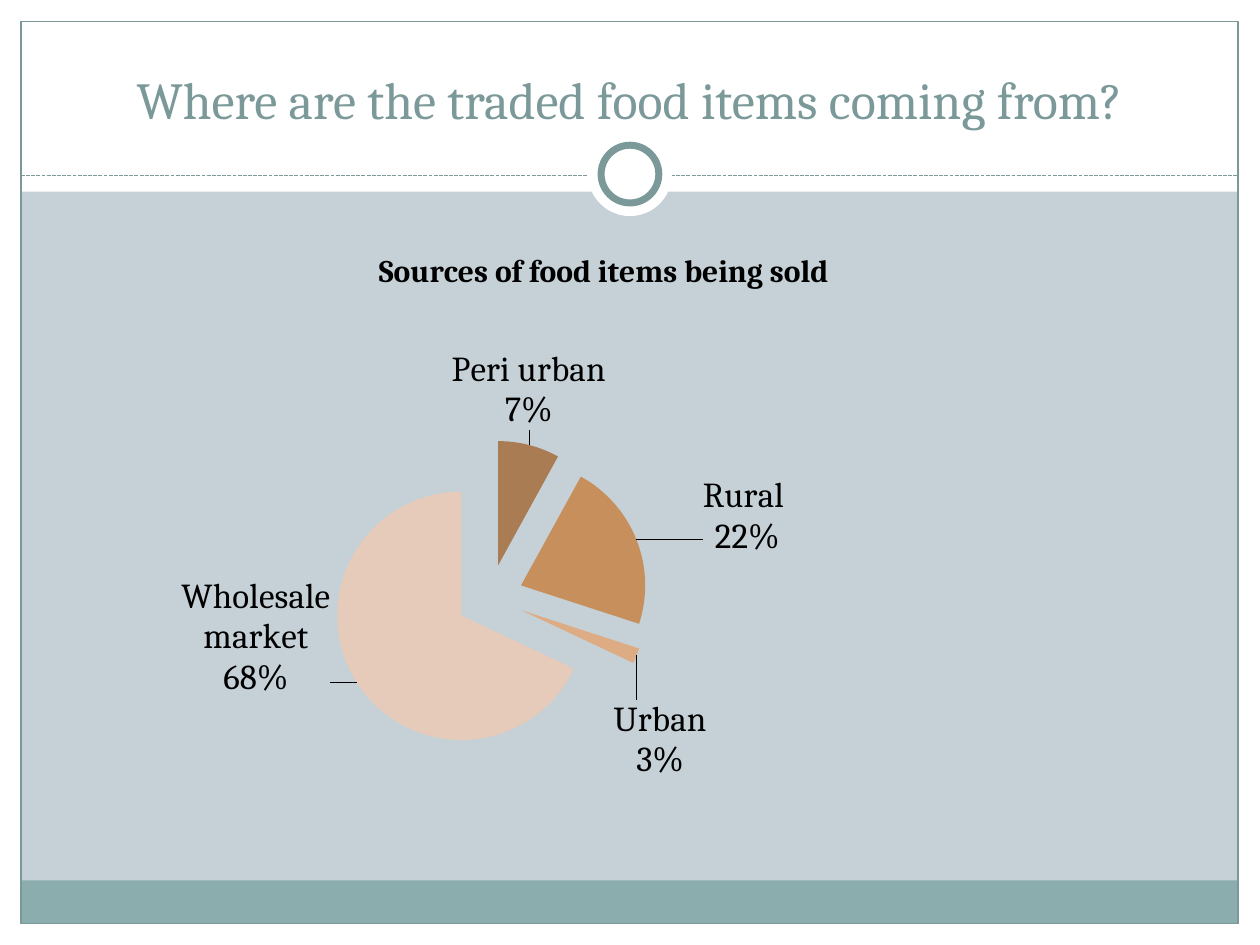
from lxml import etree
from pptx import Presentation
from pptx.chart.data import CategoryChartData
from pptx.dml.color import RGBColor
from pptx.enum.chart import XL_CHART_TYPE, XL_LABEL_POSITION
from pptx.enum.dml import MSO_LINE
from pptx.enum.shapes import MSO_CONNECTOR, MSO_SHAPE
from pptx.enum.text import MSO_ANCHOR, PP_ALIGN
from pptx.oxml import parse_xml
from pptx.oxml.ns import nsdecls, qn
from pptx.util import Pt

RECTANGLE, OVAL = MSO_SHAPE.RECTANGLE, MSO_SHAPE.OVAL
OUTSIDE = XL_LABEL_POSITION.OUTSIDE_END
FONT = "Cambria"
COLORS = {
    "background": "C5D1D7", "white": "FFFFFF", "band": "8CADAE",
    "accent": "7C999A", "black": "000000",
    "peri urban": "AA7C54", "rural": "C68F5B",
    "urban": "DDAB84", "wholesale": "E6CBBA",
}
# category, value, shown percentage, slice colour, label shift in chart fractions
SOURCES = [
    ("Peri urban", 8, "7%", "peri urban", (-0.08, -0.01)),
    ("Rural ", 22, "22%", "rural", (0.06, 0.03)),
    ("Urban", 2, "3%", "urban", (-0.03, 0.06)),
    ("Wholesale market", 68, "68%", "wholesale", (-0.02, -0.16)),
]


def color(name):
    return RGBColor.from_string(COLORS[name])


def manual_layout(x, y, size=None):
    """Return a c:layout: a fixed inner plot area, or a label shift without size."""
    inner = edges = extent = ""
    if size:
        inner = '<c:layoutTarget val="inner"/>'
        edges = '<c:xMode val="edge"/><c:yMode val="edge"/>'
        extent = f'<c:w val="{size[0]}"/><c:h val="{size[1]}"/>'
    return parse_xml(
        f'<c:layout {nsdecls("c")}><c:manualLayout>{inner}{edges}'
        f'<c:x val="{x}"/><c:y val="{y}"/>{extent}</c:manualLayout></c:layout>')


deck = Presentation()
deck.slide_width, deck.slide_height = Pt(720), Pt(540)
page = deck.slides.add_slide(deck.slide_layouts[5])
page.background.fill.solid()
page.background.fill.fore_color.rgb = color("background")

# Frame: kind, left, top, width, height, fill, line, line width
FRAME = [
    (RECTANGLE, 0, 527.8, 720, 12.2, "white", None, 0),
    (RECTANGLE, 0, 0, 720, 109.5, "white", None, 0),
    (RECTANGLE, 0, 0, 12, 540, "white", None, 0),
    (RECTANGLE, 708, 0, 12, 540, "white", None, 0),
    (RECTANGLE, 12, 503, 696, 24.8, "band", None, 0),
    (RECTANGLE, 12, 12.2, 695.5, 515.5, None, "accent", 0.75),
    (OVAL, 336, 75.5, 48, 48, "white", None, 0),
    (OVAL, 343.5, 83, 33, 33, "white", "accent", 4),
]
for kind, left, top, width, height, fill, line, weight in FRAME:
    if kind == OVAL and line is None:
        divider = page.shapes.add_connector(
            MSO_CONNECTOR.STRAIGHT, Pt(12), Pt(100.5), Pt(708), Pt(100.5))
        divider.line.color.rgb = color("accent")
        divider.line.width = Pt(0.75)
        divider.line.dash_style = MSO_LINE.SQUARE_DOT
        etree.SubElement(divider._element.spPr, qn("a:effectLst"))
    shape = page.shapes.add_shape(kind, Pt(left), Pt(top), Pt(width), Pt(height))
    shape.shadow.inherit = False
    if fill:
        shape.fill.solid()
        shape.fill.fore_color.rgb = color(fill)
    else:
        shape.fill.background()
    if line:
        shape.line.color.rgb = color(line)
        shape.line.width = Pt(weight)
    else:
        shape.line.fill.background()

# Title, brought in front of the frame
title = page.shapes.title
page.shapes._spTree.append(title._element)
title.left, title.top, title.width, title.height = Pt(24), Pt(18), Pt(672), Pt(60)
title.text_frame.text = "Where are the traded food items coming from?"
title.text_frame.vertical_anchor = MSO_ANCHOR.BOTTOM
heading = title.text_frame.paragraphs[0]
heading.alignment = PP_ALIGN.CENTER
heading.font.name, heading.font.size = FONT, Pt(29.7)
heading.font.color.rgb = color("accent")

# Pie chart
data = CategoryChartData()
data.categories = [source[0] for source in SOURCES]
data.add_series("Series 1", [source[1] for source in SOURCES])
chart = page.shapes.add_chart(
    XL_CHART_TYPE.PIE, Pt(62), Pt(128), Pt(566), Pt(392), data).chart
chart.has_legend = False
chart.font.name, chart.font.size = FONT, Pt(20)
chart.font.color.rgb = color("black")
chart.has_title = True
chart.chart_title.include_in_layout = False
chart.chart_title.text_frame.text = "Sources of food items being sold"
caption = chart.chart_title.text_frame.paragraphs[0]
caption.font.name, caption.font.size, caption.font.bold = FONT, Pt(18), True
caption.font.color.rgb = color("black")

plot = chart.plots[0]
plot.vary_by_categories = True
plot_area = chart._chartSpace.chart.plotArea
for layout in plot_area.findall(qn("c:layout")):
    plot_area.remove(layout)
plot_area.insert(0, manual_layout(0.22, 0.315, (0.33, 0.46)))

series = plot.series[0]
explosion = parse_xml(f'<c:explosion {nsdecls("c")} val="27"/>')
series._element.find(qn("c:tx")).addnext(explosion)
for index, (category, value, percentage, slice_color, shift) in enumerate(SOURCES):
    point = series.points[index]
    point.format.fill.solid()
    point.format.fill.fore_color.rgb = color(slice_color)
    label = point.data_label
    label.text_frame.text = f"{category}\n{percentage}"
    for para in label.text_frame.paragraphs:
        para.font.name, para.font.size = FONT, Pt(20)
        para.font.color.rgb = color("black")
    label.position = OUTSIDE

label_elements = series._element.iter(qn("c:dLbl"))
for element, source in zip(label_elements, SOURCES):
    element.find(qn("c:idx")).addnext(manual_layout(*source[4]))

deck.save("out.pptx")
